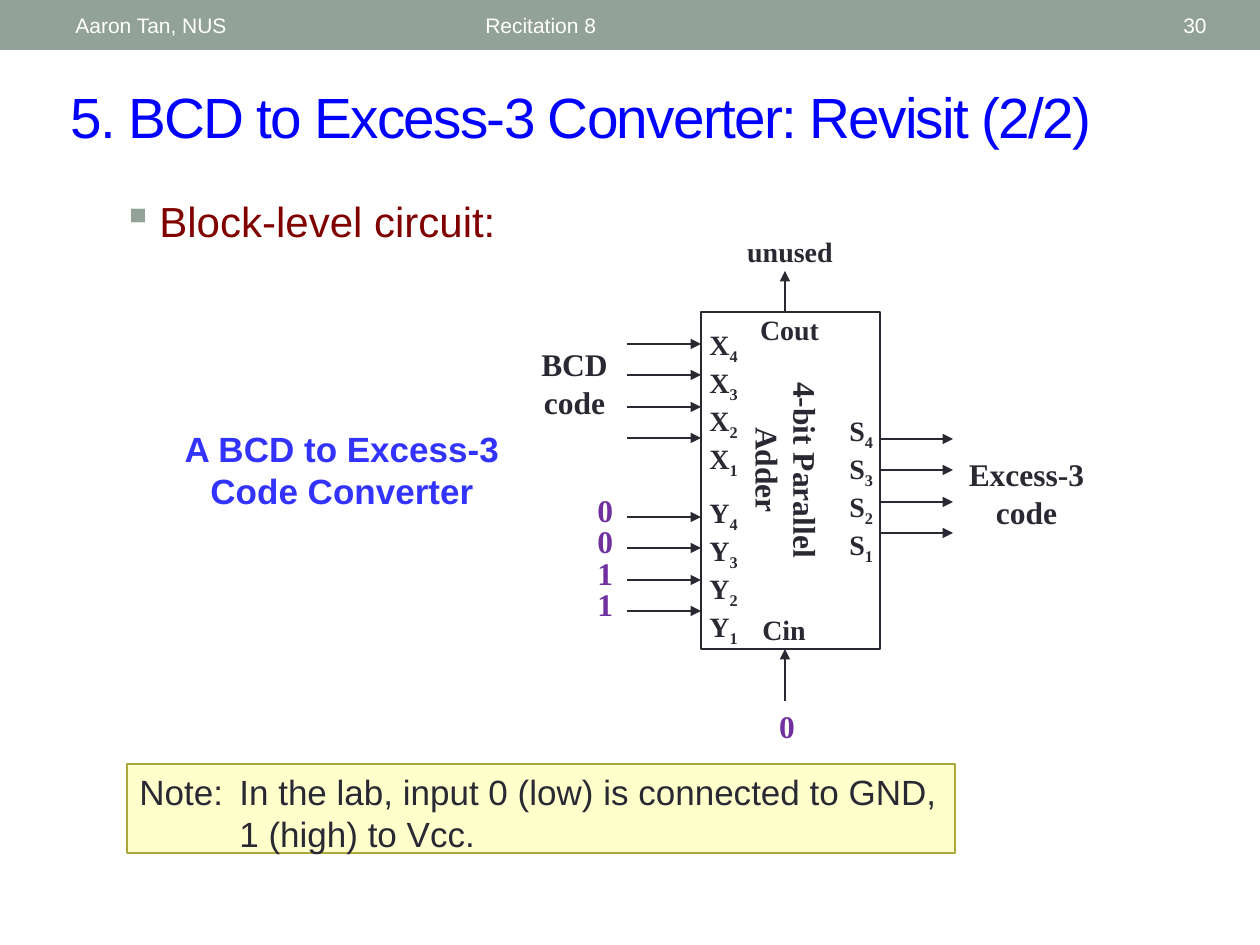
"""Build the slide showing a BCD to Excess-3 converter made from a 4-bit parallel adder."""
import pptx
import pptx.dml.color
import pptx.enum.shapes
import pptx.enum.text
import pptx.oxml
import pptx.oxml.ns
import pptx.util

RGB = pptx.dml.color.RGBColor
SHAPE = pptx.enum.shapes.MSO_SHAPE
ALIGN = pptx.enum.text.PP_ALIGN
ANCHOR = pptx.enum.text.MSO_ANCHOR
Pt = pptx.util.Pt
NS = pptx.oxml.ns.nsdecls("a")

SAGE = RGB(0x93, 0xA2, 0x99)
WHITE = RGB(0xFF, 0xFF, 0xFF)
BLUE = RGB(0x00, 0x00, 0xFF)
SOFT_BLUE = RGB(0x33, 0x33, 0xFF)
MAROON = RGB(0x80, 0x00, 0x00)
INK = RGB(0x29, 0x29, 0x34)
PURPLE = RGB(0x70, 0x30, 0xA0)
CREAM = RGB(0xFF, 0xFF, 0xCC)
OLIVE = RGB(0xAC, 0xA7, 0x3B)

SANS, SERIF = "Arial", "Times New Roman"
LEFT, CENTER, RIGHT = ALIGN.LEFT, ALIGN.CENTER, ALIGN.RIGHT
SCALE = 914400 / 126


def emu(*px):
    return [round(v * SCALE) for v in px]


def write(sp, lines, size, color, name=SERIF, bold=True, align=LEFT,
          anchor=ANCHOR.TOP, subscript=False, **spacing):
    tf = sp.text_frame
    tf.word_wrap = True
    tf.vertical_anchor = anchor
    for i, line in enumerate(lines):
        p = tf.paragraphs[0] if i == 0 else tf.add_paragraph()
        for key, value in {"alignment": align, **spacing}.items():
            setattr(p, key, value)
        for j, part in enumerate(line if subscript else [line]):
            r = p.add_run()
            r.text = part
            for key, value in {"size": Pt(size), "name": name, "bold": bold}.items():
                setattr(r.font, key, value)
            r.font.color.rgb = color
            if j:
                r.font._element.set("baseline", "-25000")
    return tf.paragraphs[0]


prs = pptx.Presentation()
prs.slide_width, prs.slide_height = emu(1260, 945)
s = prs.slides.add_slide(prs.slide_layouts[6])

rects = {}
for key, box, fill, line, width in [
    ("header", (0, 0, 1260, 50), SAGE, None, 0),
    ("adder", (701, 312, 179, 337), None, INK, 1.5),
    ("note", (127, 764, 828, 89), CREAM, OLIVE, 0.75),
]:
    sp = s.shapes.add_shape(SHAPE.RECTANGLE, *emu(*box))
    sp.shadow.inherit = False
    if fill:
        sp.fill.solid()
        sp.fill.fore_color.rgb = fill
    else:
        sp.fill.background()
    if line:
        sp.line.color.rgb = line
        sp.line.width = Pt(width)
    else:
        sp.line.fill.background()
    rects[key] = sp

header = dict(size=12, color=WHITE, name=SANS, bold=False, anchor=ANCHOR.MIDDLE)
label = dict(size=16, color=INK, align=CENTER)
code = dict(size=18, color=INK, align=CENTER)
pins = dict(size=16, color=INK, subscript=True)
texts = [
    ((63, 3, 399, 45), ["Aaron Tan, NUS"], header),
    ((473, 3, 567, 45), ["Recitation 8"], header),
    ((1099, 3, 120, 45), ["30"], {**header, "align": RIGHT}),
    ((158, 421, 368, 97), ["A BCD to Excess-3 Code Converter"],
     dict(size=20, color=SOFT_BLUE, name=SANS, align=CENTER)),
    ((697, 321, 63, 147), ["X4", "X3", "X2", "X1"], pins),
    ((697, 489, 63, 147), ["Y4", "Y3", "Y2", "Y1"], pins),
    ((837, 407, 63, 147), ["S4", "S3", "S2", "S1"], pins),
    ((585, 491, 42, 140), ["0", "0", "1", "1"],
     dict(size=18, color=PURPLE, line_spacing=Pt(18))),
    ((522, 339, 105, 88), ["BCD", "code"], code),
    ((953, 449, 147, 88), ["Excess-3", "code"], code),
    ((732, 228, 116, 47), ["unused"], label),
    ((742, 306, 95, 47), ["Cout"], label),
    ((742, 606, 84, 47), ["Cin"], label),
    ((760, 701, 54, 55), ["0"], {**code, "color": PURPLE}),
]
for box, lines, style in texts:
    write(s.shapes.add_textbox(*emu(*box)), lines, **style)

sp = s.shapes.add_textbox(*emu(682, 426, 210, 88))
sp.rotation = 90
write(sp, ["4-bit Parallel Adder"], space_before=Pt(2), **code)

sp = s.shapes.add_textbox(*emu(58, 72, 1160, 88))
p = write(sp, ["5. BCD to Excess-3 Converter: Revisit (2/2)"], 32.4, BLUE, SANS, False,
          anchor=ANCHOR.MIDDLE)
p.runs[0].font._element.set("spc", "-100")

sp = s.shapes.add_textbox(*emu(110, 189, 510, 84))
p = write(sp, ["Block-level circuit:"], 24, MAROON, SANS, False, space_before=Pt(2))
bullet = p._p.get_or_add_pPr()
bullet.append(pptx.oxml.parse_xml(f'<a:buClr {NS}><a:srgbClr val="{SAGE}"/></a:buClr>'))
bullet.append(pptx.oxml.parse_xml(f'<a:buChar {NS} char="▪"/>'))

note = write(rects["note"],
             ["Note:\tIn the lab, input 0 (low) is connected to GND, 1 (high) to Vcc."],
             20, INK, SANS, False, space_before=Pt(2))
for p, hang in [(bullet, 37), (note._p.get_or_add_pPr(), 100)]:
    p.set("marL", str(emu(hang)[0]))
    p.set("indent", str(emu(-hang)[0]))

arrows = [(785, 701, 785, 649), (785, 312, 785, 271)]
for x1, x2, top in [(627, 701, 344), (627, 701, 517), (880, 953, 439)]:
    for k in range(4):
        y = top + 63 * k // 2
        arrows.append((x1, y, x2, y))
for ends in arrows:
    sp = s.shapes.add_connector(pptx.enum.shapes.MSO_CONNECTOR.STRAIGHT, *emu(*ends))
    sp.line.color.rgb = INK
    sp.line.width = Pt(1.25)
    sp.line._get_or_add_ln().append(pptx.oxml.parse_xml(f'<a:tailEnd {NS} type="triangle"/>'))
    sp._element.spPr.append(pptx.oxml.parse_xml(f"<a:effectLst {NS}/>"))

prs.save("out.pptx")
